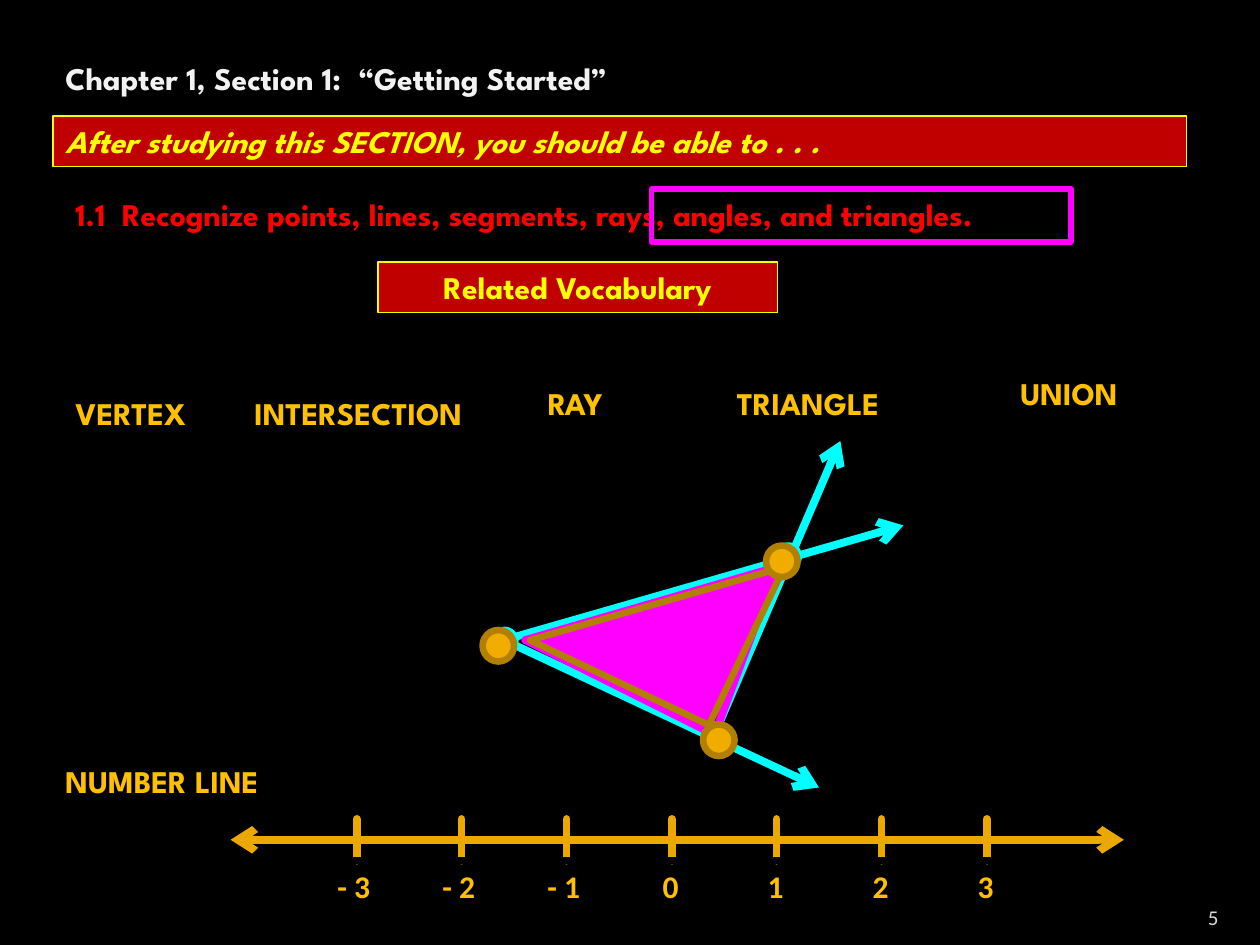
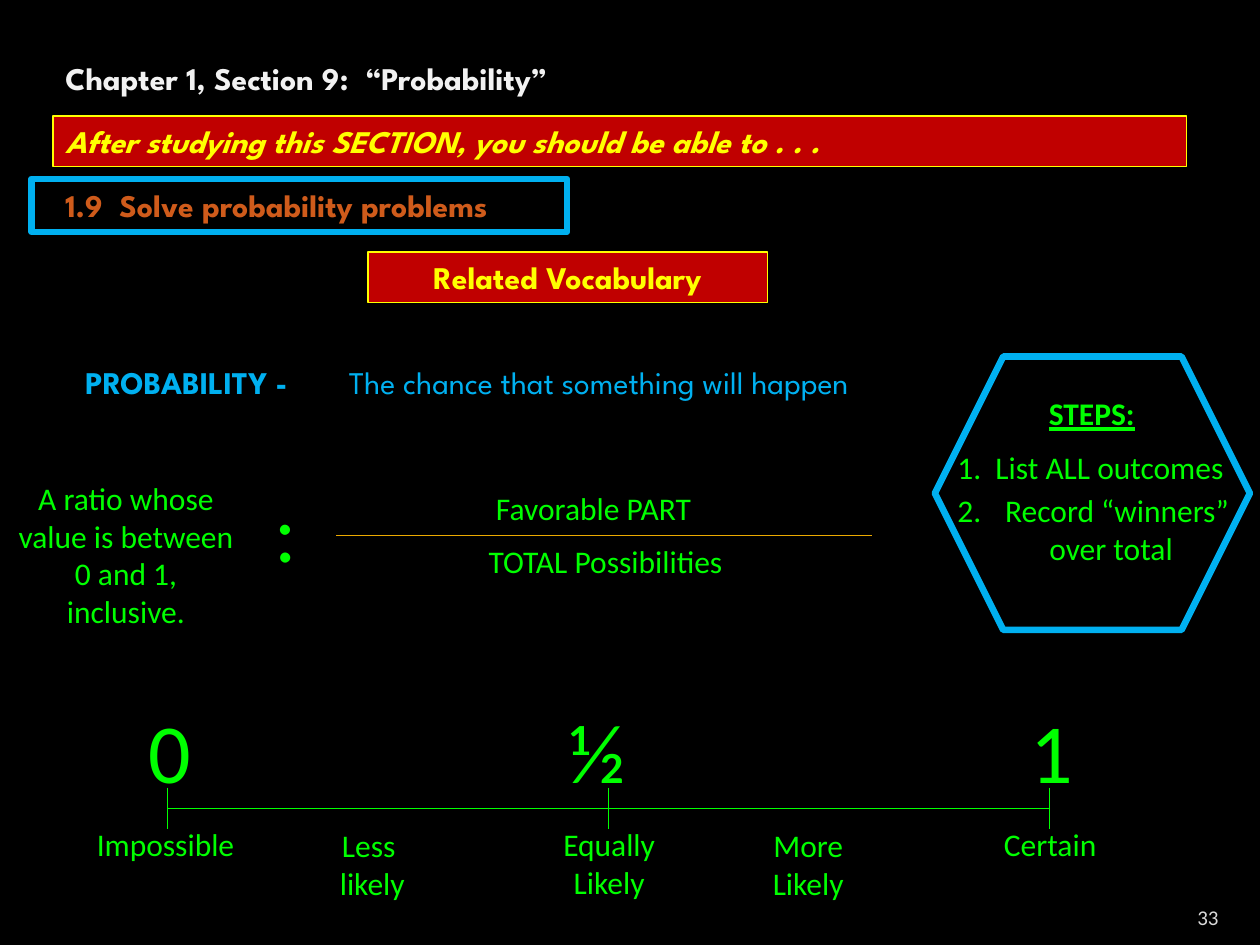
from lxml import etree
from pptx import Presentation
from pptx import util as u
from pptx.dml.color import RGBColor
from pptx.enum import shapes as sh, text as tx
from pptx.oxml import ns

BLACK = RGBColor(0, 0, 0)
RED = RGBColor(0xFF, 0, 0)
BRICK = RGBColor(0xC0, 0, 0)
YELLOW = RGBColor(0xFF, 0xFF, 0)
AMBER = RGBColor(0xFF, 0xC0, 0)
GOLD = RGBColor(0xEB, 0xA9, 0)
HONEY = RGBColor(0xF0, 0xAD, 0)
BRONZE = RGBColor(0xB2, 0x80, 0)
CYAN = RGBColor(0, 0xFF, 0xFF)
PINK = RGBColor(0xFF, 0, 0xFF)
RUST = RGBColor(0xCF, 0x5B, 0x1B)
BLUE = RGBColor(0, 0xB0, 0xF0)
GREEN = RGBColor(0, 0xFF, 0)
PALE = RGBColor(0xF2, 0xF2, 0xF2)
GRAY = RGBColor(0xD9, 0xD9, 0xD9)

HEAD = "League Spartan"
BODY = "Calibri"
LEFT, MID, RIGHT = tx.PP_ALIGN.LEFT, tx.PP_ALIGN.CENTER, tx.PP_ALIGN.RIGHT
KIND = sh.MSO_SHAPE
ROW = 0.4


def inset(box, x, y, w, h):
    return box[0] + x, box[1] + y, w, h


def place(box):
    return [u.Inches(v) for v in box]


def write(shape, words, font=BODY, size=18, color=GREEN, bold=False,
          italic=False, under=False, align=LEFT, grow=True):
    frame = shape.text_frame
    frame.word_wrap = True
    if grow:
        frame.auto_size = tx.MSO_AUTO_SIZE.SHAPE_TO_FIT_TEXT
    for i, line in enumerate(words.split("\n")):
        para = frame.add_paragraph() if i else frame.paragraphs[0]
        para.alignment = align
        run = para.add_run()
        run.text = line
        face = run.font
        face.name, face.size = font, u.Pt(size)
        face.bold, face.italic, face.underline = bold, italic, under
        face.color.rgb = color
    return frame


def label(host, box, words, **style):
    return write(host.add_textbox(*place(box)), words, **style)


def form(host, kind, box, fill=None, line=BLACK, width=3.78):
    shape = host.add_shape(kind, *place(box))
    shape.shadow.inherit = False
    if fill is None:
        shape.fill.background()
    else:
        shape.fill.solid()
        shape.fill.fore_color.rgb = fill
    shape.line.color.rgb = line
    shape.line.width = u.Pt(width)
    return shape


def stroke(host, start, end, color, width=4.5, arrows=()):
    line = host.add_connector(sh.MSO_CONNECTOR.STRAIGHT, *place(start + end))
    line.line.color.rgb = color
    line.line.width = u.Pt(width)
    props = line.element.spPr
    pen = props.find(ns.qn("a:ln"))
    if width > 1:
        pen.set("cap", "rnd")
    for side in arrows:
        etree.SubElement(pen, ns.qn("a:" + side), type="arrow")
    etree.SubElement(props, ns.qn("a:effectLst"))


def banner(host, box, words, **style):
    write(form(host, KIND.RECTANGLE, box, BRICK, YELLOW, 0.75), words,
          font=HEAD, color=YELLOW, bold=True, **style)


def header(host, box, title):
    label(host, inset(box, 0, 0, 9, ROW), title, font=HEAD, color=PALE,
          bold=True)
    banner(host, inset(box, 0, 0.5, 9, ROW),
           "After studying this SECTION, you should be able to . . .",
           italic=True)


def goal(host, box, words, color, mark, tint, width):
    label(host, box, words, font=HEAD, color=color, bold=True)
    form(host, KIND.RECTANGLE, mark, line=tint, width=width)


def footer(host, box, number):
    frame = label(host, box, number, size=12, color=GRAY, align=RIGHT,
                  grow=False)
    frame.vertical_anchor = tx.MSO_ANCHOR.BOTTOM
    frame.margin_bottom = 0


def terms(host, box):
    for x, y, w, word in ((0, 0.16, 1.08, "VERTEX"),
                          (1.42, 0.16, 2, "INTERSECTION"),
                          (3.75, 0.08, 0.92, "RAY"),
                          (5.25, 0.08, 1.58, "TRIANGLE"),
                          (7.5, 0, 1.42, "UNION"),
                          (-0.08, 3.08, 2.08, "NUMBER LINE")):
        label(host, inset(box, x, y, w, ROW), word, font=HEAD, color=AMBER,
              bold=True)


def figure(host, box):
    def spot(x, y):
        return box[0] + x, box[1] + y

    def dots(points, size, fill, line):
        for x, y in points:
            form(host, KIND.OVAL, inset(box, x, y, size, size), fill, line)

    west, south = spot(0.17, 1.58), spot(1.84, 2.33)
    dots(((0.09, 1.5), (1.75, 2.25), (2.34, 0.83)), 0.17, CYAN, CYAN)
    for start, end in ((west, spot(2.67, 2.75)), (west, spot(3.34, 0.67)),
                       (south, spot(2.84, 0))):
        stroke(host, start, end, CYAN, arrows=["tailEnd"])
    group = host.add_group_shape().shapes
    corners = spot(0.34, 1.58), spot(2.34, 1), south
    for i, corner in enumerate(corners):
        stroke(group, corner, corners[(i + 1) % 3], PINK)
    wedge = form(host, KIND.ISOSCELES_TRIANGLE,
                 inset(box, 0.48, 1.27, 2.1, 1.04), PINK, BRONZE)
    wedge.adjustments[0] = 0.44
    wedge.rotation = 163.9
    dots(((1.75, 2.25), (2.25, 0.83), (0, 1.5)), 0.25, HONEY, BRONZE)


def axis(host, box):
    x, y, w, h = box
    group = host.add_group_shape().shapes
    stroke(group, (x, y + h / 2), (x + w, y + h / 2), GOLD,
           arrows=["headEnd", "tailEnd"])
    ticks = [(n, x + 3.5 + n * 5 / 6) for n in range(-3, 4)]
    for n, mid in ticks:
        stroke(group, (mid, y), (mid, y + h), GOLD)
    for n, mid in ticks:
        wide = 0.5 if n < 0 else 0.42
        left = mid - (0.25 if n < 0 else 0.17)
        tag = form(group, KIND.RECTANGLE, (left, y + h, wide, ROW), width=4.5)
        write(tag, f"- {-n}" if n < 0 else str(n), color=AMBER, bold=True)


def ratio(host, box):
    label(host, inset(box, 0, 0, 2, 1.01),
          "A ratio whose value is between 0 and 1, inclusive.", align=MID)
    label(host, inset(box, 2.08, 0, 0.5, 0.91), ":", size=48)
    label(host, inset(box, 3.5, 0.08, 2.42, ROW), "Favorable PART", align=MID)
    label(host, inset(box, 3.25, 0.5, 3.17, ROW), "TOTAL Possibilities ",
          align=MID)
    x, y = box[0] + 2.67, box[1] + 0.5
    stroke(host, (x, y), (x + 4.25, y), GOLD, 0.5)


def scale(host, box):
    x, y, w, h = box
    stroke(host, (x, y + h / 2), (x + w, y + h / 2), GREEN, 0.5)
    for i, (shift, wide, mark) in enumerate(((-0.25, 0.5, "0"),
                                             (-0.41, 0.83, "½"),
                                             (-0.25, 0.5, "1"))):
        mid = x + i * w / 2
        stroke(host, (mid, y), (mid, y + h), GREEN, 0.5)
        label(host, (mid + shift, y - 0.75, wide, 0.91), mark, size=48)
    for left, top, wide, high, words, align in (
            (-0.66, 0.25, 1.33, ROW, "Impossible", LEFT),
            (0.75, 0.26, 1.75, 0.71, "Less \nlikely", MID),
            (2.84, 0.25, 1.33, 0.71, "Equally Likely", MID),
            (4.42, 0.26, 1.33, 0.71, "More Likely", MID),
            (6.34, 0.25, 1.33, ROW, "Certain", MID)):
        label(host, inset(box, left, top, wide, high), words, align=align)


def steps(host, box):
    label(host, inset(box, 0.58, 0.25, 1.33, ROW), "STEPS:", bold=True,
          under=True, align=MID)
    label(host, inset(box, 0.08, 0.68, 2.5, ROW), "1.  List ALL outcomes")
    frame = label(host, inset(box, 0.08, 1.02, 2.5, 0.71),
                  "Record “winners”\nover total")
    for para, margin, indent in zip(frame.paragraphs, (0.38, 0.73),
                                    (-0.38, 0)):
        props = para._p.get_or_add_pPr()
        props.set("marL", str(u.Inches(margin)))
        props.set("indent", str(u.Inches(indent)))
    etree.SubElement(frame.paragraphs[0]._p.pPr, ns.qn("a:buAutoNum"),
                     type="arabicPeriod", startAt="2")
    form(host, KIND.HEXAGON, box, line=BLUE)


def start(deck, title, number):
    slide = deck.slides.add_slide(deck.slide_layouts[6])
    slide.background.fill.solid()
    slide.background.fill.fore_color.rgb = BLACK
    header(slide.shapes, (0.42, 0.42, 9, 0.9), title)
    footer(slide.shapes, (8.97, 7.08, 0.8, 0.3), number)
    return slide.shapes


def shapes_page(deck):
    host = start(deck, "Chapter 1, Section 1:  “Getting Started”", "5")
    goal(host, (0.5, 1.5, 9, ROW),
         "1.1  Recognize points, lines, segments, rays, angles, and triangles.",
         RED, (5.17, 1.5, 3.33, 0.42), PINK, 3)
    banner(host, (3, 2.08, 3.17, ROW), "Related Vocabulary", align=MID)
    terms(host, (0.5, 2.92, 8.92, 3.48))
    figure(host, (3.83, 3.5, 3.34, 2.75))
    axis(host, (1.83, 6.5, 7.09, 0.33))


def chance_page(deck):
    host = start(deck, "Chapter 1, Section 9:  “Probability”", "33")
    goal(host, (0.42, 1.43, 9, ROW), "1.9  Solve probability problems",
         RUST, (0.25, 1.42, 4.25, 0.42), BLUE, 3.78)
    banner(host, (2.92, 2, 3.17, ROW), "Related Vocabulary", align=MID)
    label(host, (0.58, 2.83, 2.08, ROW), "PROBABILITY -", font=HEAD,
          color=BLUE, bold=True)
    label(host, (2.67, 2.83, 6.5, ROW),
          "The chance that something will happen", font=HEAD, color=BLUE)
    ratio(host, (0, 3.75, 6.92, 1.01))
    scale(host, (1.33, 6.25, 7, 0.33))
    steps(host, (7.42, 2.83, 2.5, 2.17))


def main():
    deck = Presentation()
    deck.slide_width, deck.slide_height = u.Inches(10), u.Inches(7.5)
    shapes_page(deck)
    chance_page(deck)
    deck.save("out.pptx")


if __name__ == "__main__":
    main()
